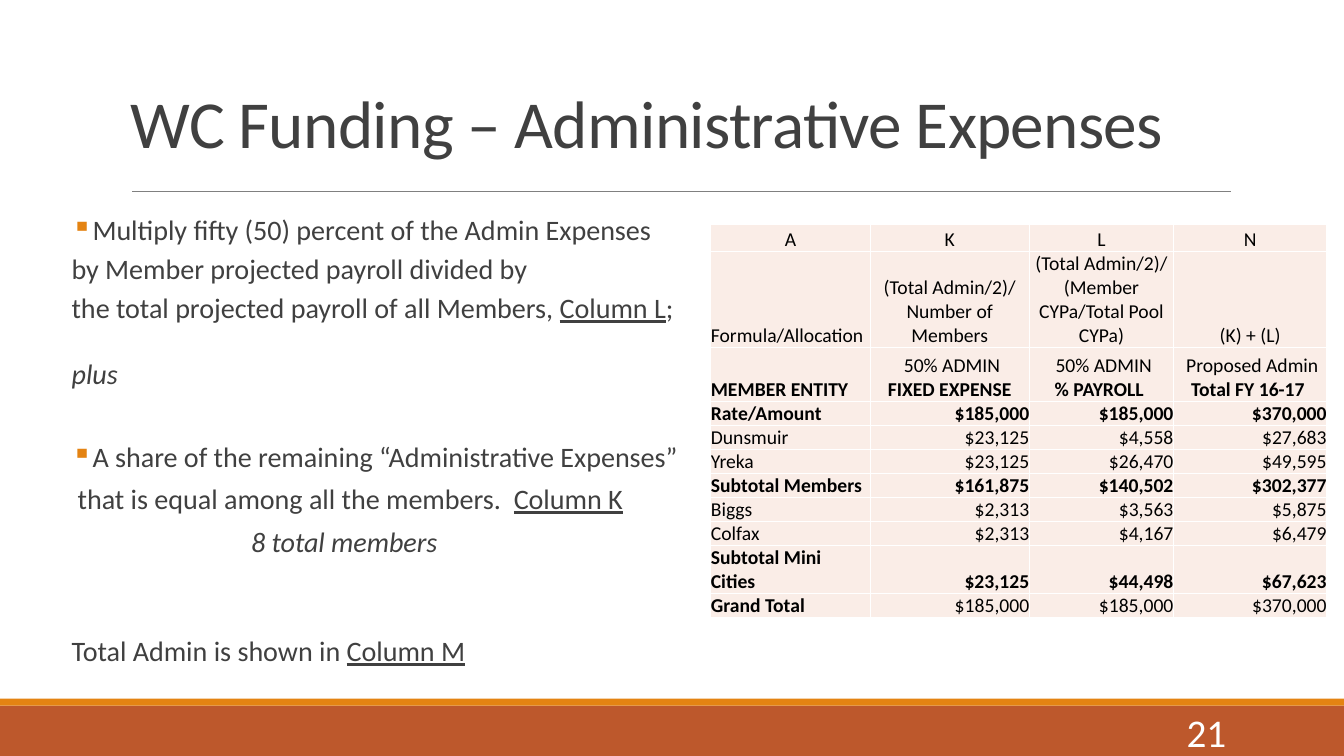
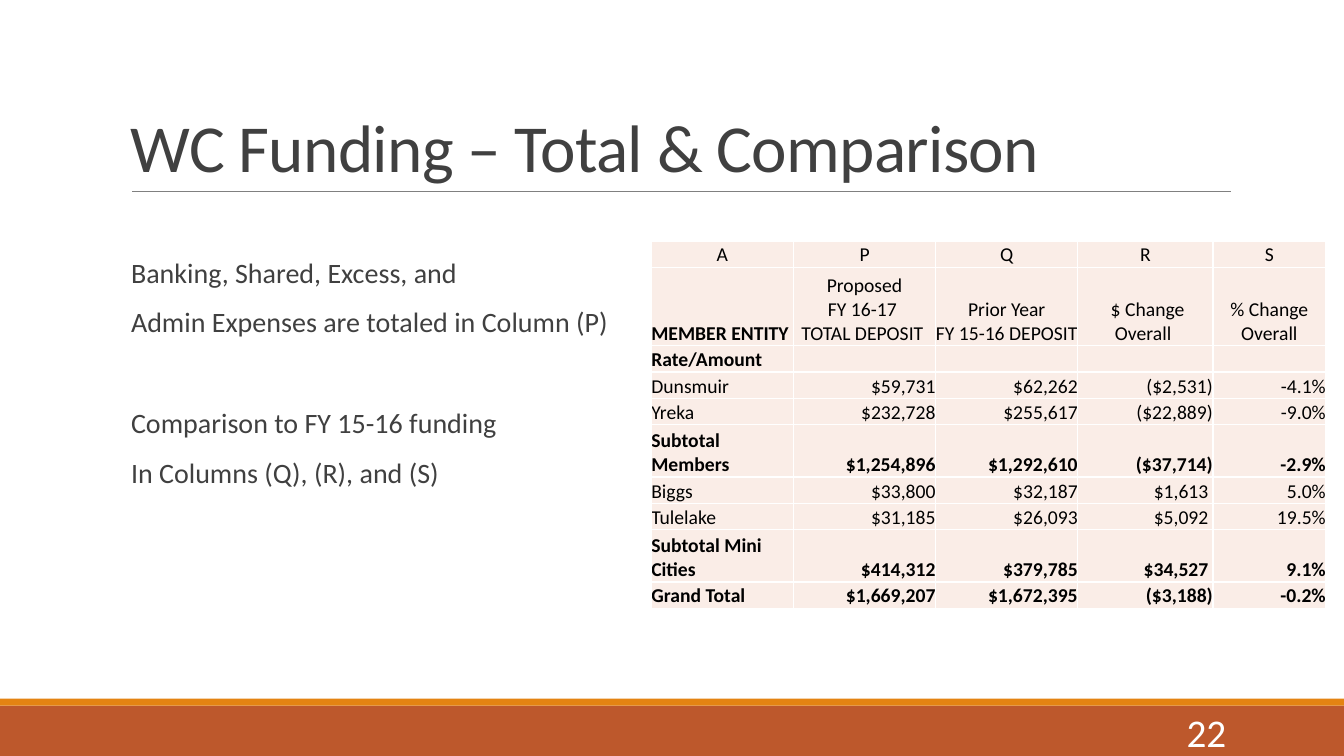
from dataclasses import dataclass

from lxml.etree import SubElement
from pptx import Presentation
from pptx.dml.color import RGBColor
from pptx.enum.shapes import MSO_CONNECTOR, MSO_SHAPE
from pptx.enum.text import MSO_ANCHOR, PP_ALIGN
from pptx.oxml.ns import qn
from pptx.util import Inches, Pt

WIDE, HIGH = Inches(13.33), Inches(7.5)
RUST = RGBColor(0xBD, 0x58, 0x2C)
AMBER = RGBColor(0xE4, 0x83, 0x12)
GRAY = RGBColor(0x80, 0x80, 0x80)
INK = RGBColor(0x40, 0x40, 0x40)
BLACK = RGBColor(0, 0, 0)
WHITE = RGBColor(0xFF, 0xFF, 0xFF)
BLUSH = RGBColor(0xFA, 0xED, 0xE7)
FACE = "Calibri"
MARKS = {"*": "bold", "_": "underline", "~": "italic"}


@dataclass
class Line:
    text: str
    before: float = 2
    after: float = 4
    lead: float = 0.9
    left: float = 0
    bullet: bool = False


@dataclass
class Body:
    left: float
    top: float
    width: float
    height: float
    size: float
    lines: list[Line]


@dataclass
class Row:
    cells: tuple[str, ...]
    lines: float = 1
    head: bool = False


@dataclass
class Grid:
    left: float
    top: float
    unit: float
    cols: list[float]
    rows: list[Row]


@dataclass
class Page:
    title: str
    base: float
    number: str
    body: Body
    grid: Grid


def across(share: float) -> int:
    return round(WIDE * share / 100)


def down(share: float) -> int:
    return round(HIGH * share / 100)


def area(left: float, top: float, width: float, height: float) -> tuple:
    return across(left), down(top), across(width), down(height)


def write(para, text: str, size: float, color: RGBColor) -> list:
    pieces, state, chunk = [], set(), ""
    for char in text:
        if char in MARKS:
            pieces.append((chunk, set(state)))
            state ^= {MARKS[char]}
            chunk = ""
        else:
            chunk += char
    pieces.append((chunk, state))
    runs = []
    for words, style in pieces:
        if words:
            run = para.add_run()
            run.text = words
            font = run.font
            font.name, font.size = FACE, Pt(size)
            font.color.rgb = color
            for name in style:
                setattr(font, name, True)
            runs.append(run)
    return runs


def frame(slide, box: tuple, anchor: MSO_ANCHOR, inset: float = 0.1):
    text = slide.shapes.add_textbox(*box).text_frame
    text.word_wrap = True
    text.vertical_anchor = anchor
    text.margin_left = text.margin_right = Inches(inset)
    return text


def band(slide, top: float, height: float, color: RGBColor) -> None:
    bar = slide.shapes.add_shape(MSO_SHAPE.RECTANGLE, *area(0, top, 100, height))
    bar.shadow.inherit = False
    bar.fill.solid()
    bar.fill.fore_color.rgb = color
    bar.line.fill.background()


def base(slide, page: Page) -> None:
    band(slide, 93.33, 6.67, RUST)
    band(slide, 92.4, 0.93, AMBER)
    rule = slide.shapes.add_connector(
        MSO_CONNECTOR.STRAIGHT, across(9.83), down(25.33), across(91.6), down(25.33))
    rule.line.color.rgb = GRAY
    rule.line.width = Pt(0.5)
    SubElement(rule._element.spPr, qn("a:effectLst"))
    title = frame(slide, area(9, page.base - 15.5, 82.5, 15.5), MSO_ANCHOR.BOTTOM)
    para = title.paragraphs[0]
    para.line_spacing = 0.85
    for run in write(para, page.title, 48, INK):
        run.font._element.set("spc", "-50")
    number = frame(slide, area(81.25, 94.13, 10.73, 5.33), MSO_ANCHOR.MIDDLE)
    para = number.paragraphs[0]
    para.alignment = PP_ALIGN.RIGHT
    write(para, page.number, 28, WHITE)


def prose(slide, body: Body) -> None:
    box = area(body.left, body.top, body.width, body.height)
    text = frame(slide, box, MSO_ANCHOR.TOP, 0)
    for index, line in enumerate(body.lines):
        para = text.add_paragraph() if index else text.paragraphs[0]
        para.line_spacing = line.lead
        para.space_before = Pt(line.before if index else 0)
        para.space_after = Pt(line.after)
        props = para._p.get_or_add_pPr()
        hang = 1.5 if line.bullet else 0
        props.set("marL", str(across(line.left + hang)))
        props.set("indent", str(-across(hang)))
        if line.bullet:
            tint = SubElement(props, qn("a:buClr"))
            SubElement(tint, qn("a:srgbClr"), val=str(AMBER))
            SubElement(props, qn("a:buChar"), char="▪")
        else:
            SubElement(props, qn("a:buNone"))
        write(para, line.text, body.size, INK)


def edge(cell) -> None:
    props = cell._tc.get_or_add_tcPr()
    for index, side in enumerate(("lnL", "lnR", "lnT", "lnB")):
        line = props.makeelement(qn("a:" + side), {"w": str(Pt(1))})
        props.insert(index, line)
        fill = SubElement(line, qn("a:solidFill"))
        SubElement(fill, qn("a:srgbClr"), val=str(WHITE))


def fill(cell, text: str, align: PP_ALIGN) -> None:
    cell.margin_left = cell.margin_right = 0
    cell.margin_top = cell.margin_bottom = 0
    cell.vertical_anchor = MSO_ANCHOR.BOTTOM
    cell.fill.solid()
    cell.fill.fore_color.rgb = BLUSH
    edge(cell)
    for index, part in enumerate(text.split("\n")):
        para = cell.text_frame.add_paragraph() if index else cell.text_frame.paragraphs[0]
        para.alignment = align
        if not write(para, part, 14, BLACK):
            SubElement(para._p, qn("a:endParaRPr"), sz="1400")


def table(slide, grid: Grid) -> None:
    high = grid.unit * sum(row.lines for row in grid.rows)
    box = area(grid.left, grid.top, sum(grid.cols), high)
    sheet = slide.shapes.add_table(len(grid.rows), len(grid.cols), *box).table
    sheet.first_row = sheet.horz_banding = False
    for col, width in zip(sheet.columns, grid.cols):
        col.width = across(width)
    for y, row in enumerate(grid.rows):
        sheet.rows[y].height = down(grid.unit * row.lines)
        for x, text in enumerate(row.cells):
            if x == 0 and y > 0:
                align = PP_ALIGN.LEFT
            else:
                align = PP_ALIGN.CENTER if row.head else PP_ALIGN.RIGHT
            fill(sheet.cell(y, x), text, align)


ADMIN = Page(
    "WC Funding – Administrative Expenses", 22.13, "21",
    Body(3.68, 28, 48, 64, 20.1, [
        Line("Multiply fifty (50) percent of the Admin Expenses", left=1.65, bullet=True),
        Line("by Member projected payroll divided by", left=1.65),
        Line("the total projected payroll of all Members, _Column L_;", left=1.65),
        Line("~plus", 25.2, lead=0.7, left=1.65),
        Line("A share of the remaining “Administrative Expenses”", 32, lead=1,
             left=1.65, bullet=True),
        Line("that is equal among all the members.  _Column K", lead=1, left=2.1),
        Line("~8 total members", lead=1, left=15),
        Line("Total Admin is shown in _Column M", 56.4, lead=0.7, left=1.65),
    ]),
    Grid(52.89, 29.73, 3.18, [11.85, 11.85, 10.73, 11.4], [
        Row(("A", "K", "L", "N"), 1.1, True),
        Row(("Formula/Allocation", "(Total Admin/2)/ Number of Members",
             "(Total Admin/2)/ (Member CYPa/Total Pool CYPa)", "(K) + (L)"), 4, True),
        Row(("*MEMBER ENTITY", " 50% ADMIN\n*FIXED EXPENSE", " 50% ADMIN\n*% PAYROLL ",
             " Proposed Admin *Total FY 16-17 "), 2.25, True),
        Row(("*Rate/Amount", "*$185,000", "*$185,000", "*$370,000")),
        Row(("Dunsmuir", "$23,125", "$4,558", "$27,683")),
        Row(("Yreka", "$23,125", "$26,470", "$49,595")),
        Row(("*Subtotal Members", "*$161,875", "*$140,502", "*$302,377")),
        Row(("Biggs", "$2,313", "$3,563", "$5,875")),
        Row(("Colfax", "$2,313", "$4,167", "$6,479")),
        Row(("*Subtotal Mini Cities", "*$23,125", "*$44,498", "*$67,623"), 2),
        Row(("*Grand Total", "$185,000", "$185,000", "$370,000")),
    ]),
)

TOTAL = Page(
    "WC Funding – Total & Comparison", 25.33, "22",
    Body(9.75, 33.6, 39, 40, 20, [
        Line("Banking, Shared, Excess, and", 12, 2),
        Line("Admin Expenses are totaled in Column (P)", 12, 2),
        Line("Comparison to FY 15-16 funding", 48, 2),
        Line("In Columns (Q), (R), and (S)", 12, 2),
    ]),
    Grid(48.46, 31.87, 3.47, [10.58, 10.58, 10.58, 10.05, 8.4], [
        Row(("A", "P", "Q", "R", "S"), 1, True),
        Row(("*MEMBER ENTITY", "Proposed\nFY 16-17 \nTOTAL DEPOSIT ",
             "Prior Year\nFY 15-16 DEPOSIT ", " $ Change Overall ",
             "% Change Overall"), 3, True),
        Row(("*Rate/Amount", "", "", "", "")),
        Row(("Dunsmuir", "$59,731", "$62,262", "($2,531)", "-4.1%")),
        Row(("Yreka", "$232,728", "$255,617", "($22,889)", "-9.0%")),
        Row(("*Subtotal Members", "*$1,254,896", "*$1,292,610", "*($37,714)", "*-2.9%"), 2),
        Row(("Biggs", "$33,800", "$32,187", "$1,613 ", "5.0%")),
        Row(("Tulelake", "$31,185", "$26,093", "$5,092 ", "19.5%")),
        Row(("*Subtotal Mini Cities", "*$414,312", "*$379,785", "*$34,527 ", "*9.1%"), 2),
        Row(("*Grand Total", "*$1,669,207", "*$1,672,395", "*($3,188)", "*-0.2%")),
    ]),
)


def main() -> None:
    deck = Presentation()
    deck.slide_width, deck.slide_height = WIDE, HIGH
    for page in (ADMIN, TOTAL):
        slide = deck.slides.add_slide(deck.slide_layouts[6])
        base(slide, page)
        prose(slide, page.body)
        table(slide, page.grid)
    deck.save("out.pptx")


if __name__ == "__main__":
    main()
